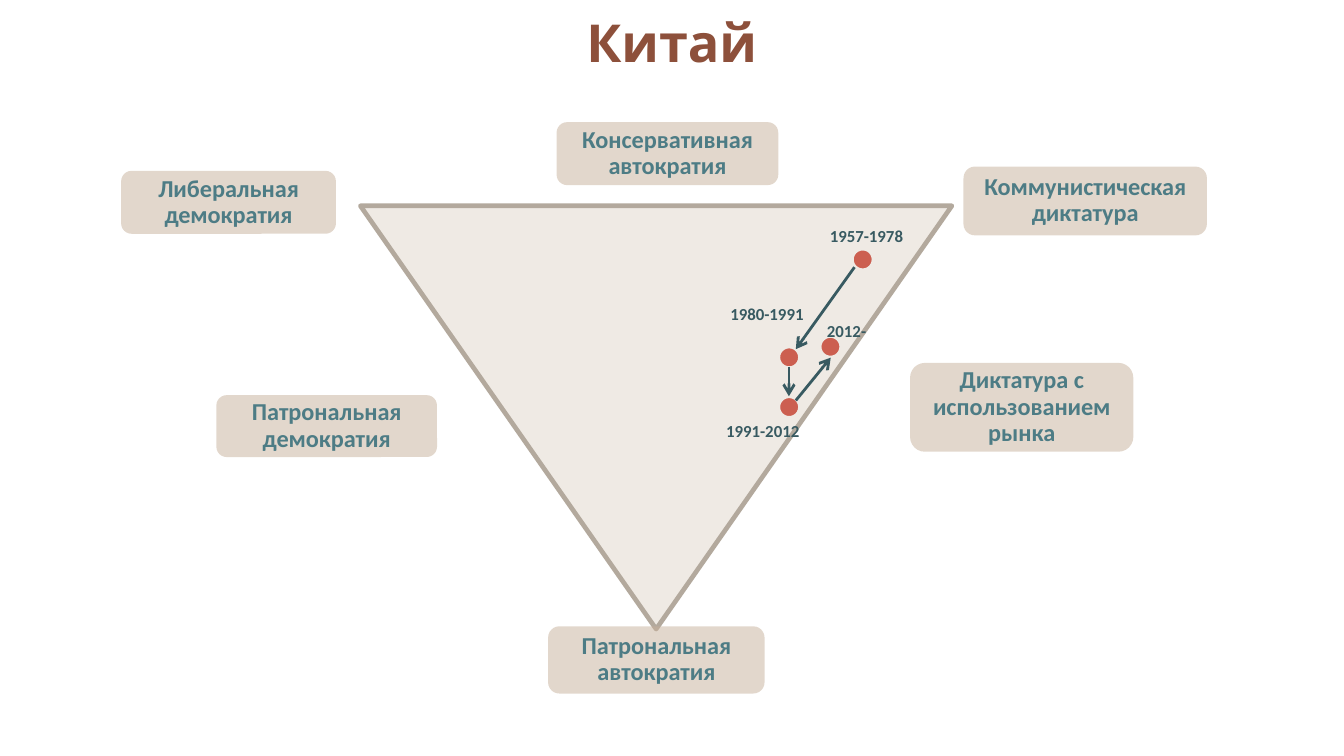
from lxml import etree
from pptx import Presentation
from pptx import util as u
from pptx.dml.color import RGBColor
from pptx.enum import shapes, text
from pptx.oxml.ns import qn

SAND, STONE, TAUPE = "C7B09A", "EFEAE4", "B3A99D"
TEAL, DARK_TEAL, RED, BROWN = "4D7C85", "385A61", "CC5F50", "8D503B"


def colour(value):
    return RGBColor.from_string(value)


def add_figure(page, kind, left, top, width, height, fill, line=None, weight=0):
    figure = page.shapes.add_shape(kind, u.Cm(left), u.Cm(top), u.Cm(width), u.Cm(height))
    figure.shadow.inherit = False
    figure.fill.solid()
    figure.fill.fore_color.rgb = colour(fill)
    if line:
        figure.line.color.rgb = colour(line)
        figure.line.width = u.Pt(weight)
    else:
        figure.line.fill.background()
    return figure


def write(frame, words, size, font, ink):
    """Fill a frame with one centred bold paragraph."""
    frame.word_wrap = True
    para = frame.paragraphs[0]
    para.text = words
    para.alignment = text.PP_ALIGN.CENTER
    para.font.size = u.Pt(size)
    para.font.name = font
    para.font.bold = True
    para.font.color.rgb = colour(ink)
    return para


def add_text(page, left, top, width, height, words, size, font, ink):
    box = page.shapes.add_textbox(u.Cm(left), u.Cm(top), u.Cm(width), u.Cm(height))
    write(box.text_frame, words, size, font, ink)
    return box


def add_title(page, left, top, width, height):
    box = add_text(page, left, top, width, height, "Китай", 28, "Open Sans", BROWN)
    box.text_frame.vertical_anchor = text.MSO_ANCHOR.MIDDLE


def add_regime_label(page, left, top, width, height, words):
    label = add_figure(page, shapes.MSO_SHAPE.ROUNDED_RECTANGLE, left, top, width, height, SAND)
    tint = label.fill._xPr.find(qn("a:solidFill"))[0]
    etree.SubElement(tint, qn("a:alpha"), val="50000")
    frame = label.text_frame
    frame.margin_left = frame.margin_right = u.Cm(0.18)
    frame.margin_top = frame.margin_bottom = u.Cm(0.18)
    frame.vertical_anchor = text.MSO_ANCHOR.MIDDLE
    write(frame, words, 13, "Calibri", TEAL).line_spacing = 0.9


def add_arrow(page, x1, y1, x2, y2):
    arrow = page.shapes.add_connector(
        shapes.MSO_CONNECTOR.STRAIGHT, u.Cm(x1), u.Cm(y1), u.Cm(x2), u.Cm(y2))
    arrow.line.color.rgb = colour(DARK_TEAL)
    arrow.line.width = u.Pt(1.5)
    etree.SubElement(arrow.line._get_or_add_ln(), qn("a:tailEnd"), type="arrow")
    etree.SubElement(arrow._element.spPr, qn("a:effectLst"))


def add_regime_map(page, left, top):
    """Draw the triangle with the regime types around it."""
    triangle = add_figure(page, shapes.MSO_SHAPE.ISOSCELES_TRIANGLE,
                          left + 4.52, top + 1.58, 11.18, 8, STONE, TAUPE, 2.5)
    triangle.rotation = 180
    for x, y, width, height, words in (
        (15.92, 0.84, 4.6, 1.3, "Коммунистическая диктатура"),
        (0, 0.92, 4.06, 1.19, "Либеральная демократия"),
        (8.07, 9.53, 4.09, 1.27, "Патрональная автократия"),
        (8.23, 0, 4.19, 1.19, "Консервативная автократия"),
        (14.91, 4.55, 4.22, 1.68, "Диктатура с использованием рынка"),
        (1.8, 5.16, 4.17, 1.17, "Патрональная демократия"),
    ):
        add_regime_label(page, left + x, top + y, width, height, words)


def add_trajectory(page, left, top):
    """Draw the dated path, measured from the triangle's top left corner."""
    for x, y in ((9.29, 0.81), (7.9, 2.66), (7.9, 3.6), (8.68, 2.46)):
        add_figure(page, shapes.MSO_SHAPE.OVAL, left + x, top + y, 0.41, 0.41, RED, STONE, 2)
    for x1, y1, x2, y2 in ((9.34, 1.16, 8.23, 2.71), (8.1, 3.04, 8.1, 3.6),
                           (8.23, 3.68, 8.89, 2.87)):
        add_arrow(page, left + x1, top + y1, left + x2, top + y2)
    for x, y, width, years in (
        (8.56, 0.25, 2.01, "1957-1978"),
        (6.68, 1.72, 2.01, "1980-1991"),
        (6.6, 3.93, 2.01, "1991-2012"),
        (8.48, 2.05, 1.42, "2012-"),
    ):
        add_text(page, left + x, top + y, width, 0.63, years, 9, "Calibri", DARK_TEAL)


def main():
    deck = Presentation()
    deck.slide_width, deck.slide_height = u.Cm(25.4), u.Cm(14.29)
    page = deck.slides.add_slide(deck.slide_layouts[6])
    add_regime_map(page, 2.29, 2.31)
    add_title(page, 0.3, -0.03, 24.79, 1.65)
    add_trajectory(page, 6.81, 3.89)
    deck.save("out.pptx")


if __name__ == "__main__":
    main()
